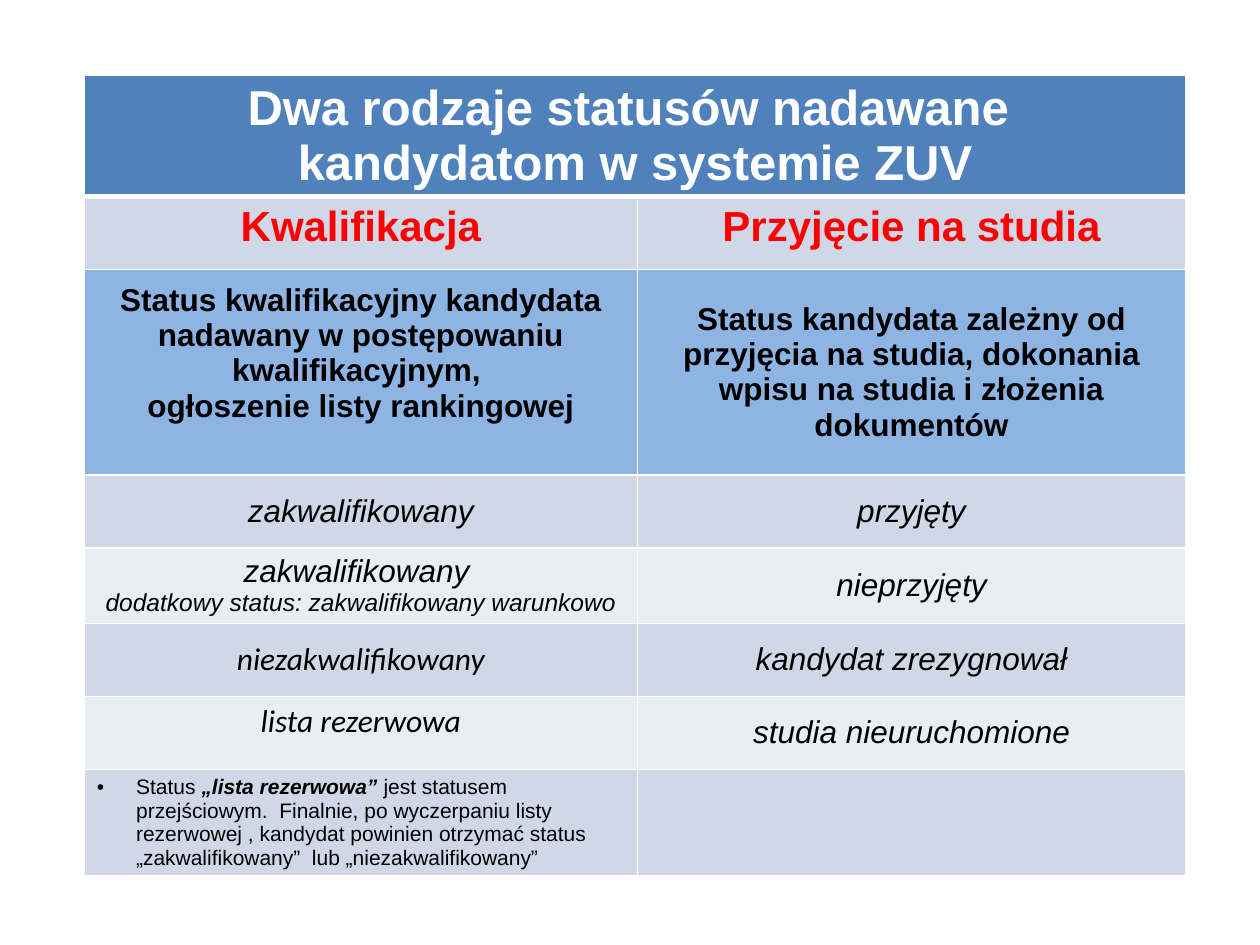
from lxml.etree import SubElement
from pptx import Presentation
from pptx.dml.color import RGBColor
from pptx.enum.text import MSO_ANCHOR as Anchor, PP_ALIGN as Align
from pptx.oxml import parse_xml
from pptx.oxml.ns import qn, nsdecls
from pptx.util import Cm, Pt

# Content: a cell is a list of paragraphs, a paragraph a list of (text, style)
TITLE = dict(size=28, color="FFFFFF", bold=True)
HEAD = dict(size=24, color="FF0000", bold=True)
LEAD = dict(size=18, bold=True)
STATUS = dict(size=18, italic=True)
STATUS_ALT = dict(STATUS, font="Calibri")
DETAIL = dict(size=14, italic=True)
NOTE = dict(size=12)
NOTE_KEY = dict(size=12, bold=True, italic=True)

ROWS = [
    ([[("Dwa rodzaje statusów nadawane ", TITLE)],
      [("kandydatom w systemie ZUV", TITLE)]], []),
    ([[("Kwalifikacja", HEAD)]], [[("Przyjęcie na studia", HEAD)]]),
    ([[("Status kwalifikacyjny kandydata nadawany w postępowaniu kwalifikacyjnym, ", LEAD)],
      [("ogłoszenie listy rankingowej", LEAD)]],
     [[("Status kandydata zależny od przyjęcia na studia, dokonania wpisu "
        "na studia i złożenia dokumentów", LEAD)]]),
    ([[("zakwalifikowany", STATUS)]], [[("przyjęty", STATUS)]]),
    ([[("zakwalifikowany ", STATUS)],
      [("dodatkowy status: zakwalifikowany warunkowo", DETAIL)]],
     [[("nieprzyjęty", STATUS)]]),
    ([[("niezakwalifikowany", STATUS_ALT)]], [[("kandydat zrezygnował", STATUS)]]),
    ([[("lista rezerwowa", STATUS_ALT)]], [[("studia nieuruchomione", STATUS)]]),
    ([[("Status ", NOTE), ("„lista rezerwowa” ", NOTE_KEY),
       ("jest statusem przejściowym.  Finalnie, po wyczerpaniu listy rezerwowej , "
        "kandydat powinien otrzymać status „zakwalifikowany”  lub „niezakwalifikowany”",
        NOTE)]], []),
]
BAND, LIGHT = "D0D8E8", "E9EDF4"
FILLS = ["4F81BD", BAND, "8EB4E3", BAND, LIGHT, BAND, LIGHT, BAND]
HEIGHTS = [2.42, 1.47, 4.14, 1.47, 1.52, 1.47, 1.47, 2.13]
WIDTHS = [11.15, 11.05]
TOP_ANCHORED = {(0, 0), (1, 0), (1, 1), (6, 0), (7, 0)}
LEFT, TOP = 1.7, 1.51
LAST = len(ROWS) - 1


def rgb(value):
    return RGBColor.from_string(value)


def add_run(p, text, size, color="000000", bold=False, italic=False, font="Arial"):
    r = p.add_run()
    r.text = text
    f = r.font
    f.size, f.name, f.bold, f.italic = Pt(size), font, bold, italic
    f.color.rgb = rgb(color)


def set_borders(cell, bottom):
    tc_pr = cell._tc.get_or_add_tcPr()
    for i, (side, width) in enumerate([("L", 1), ("R", 1), ("T", 1), ("B", bottom)]):
        tc_pr.insert(i, parse_xml(
            f'<a:ln{side} {nsdecls("a")} w="{Pt(width)}"><a:solidFill>'
            f'<a:srgbClr val="FFFFFF"/></a:solidFill></a:ln{side}>'))


def add_bullet(p, indent):
    p_pr = p._p.get_or_add_pPr()
    p_pr.set("marL", str(indent))
    p_pr.set("indent", str(-indent))
    SubElement(p_pr, qn("a:buFont")).set("typeface", "Arial")
    SubElement(p_pr, qn("a:buChar")).set("char", "•")


def fill_cell(cell, paragraphs, row, col):
    cell.fill.solid()
    cell.fill.fore_color.rgb = rgb(FILLS[row])
    set_borders(cell, 3 if row == 0 else 1)
    top = (row, col) in TOP_ANCHORED
    cell.vertical_anchor = Anchor.TOP if top else Anchor.MIDDLE
    tf = cell.text_frame
    for i, runs in enumerate(paragraphs):
        p = tf.add_paragraph() if i else tf.paragraphs[0]
        p.alignment = Align.LEFT if row == LAST else Align.CENTER
        if row == LAST:
            add_bullet(p, Cm(0.79))
        for text, style in runs:
            add_run(p, text, **style)


prs = Presentation()
prs.slide_width, prs.slide_height = Cm(25.4), Cm(19.05)
s = prs.slides.add_slide(prs.slide_layouts[6])

# Status table
table = s.shapes.add_table(len(ROWS), len(WIDTHS), Cm(LEFT), Cm(TOP),
                           Cm(sum(WIDTHS)), Cm(sum(HEIGHTS))).table
for column, width in zip(table.columns, WIDTHS):
    column.width = Cm(width)
for i, (cells, height) in enumerate(zip(ROWS, HEIGHTS)):
    table.rows[i].height = Cm(height)
    for j, paragraphs in enumerate(cells):
        fill_cell(table.cell(i, j), paragraphs, i, j)

# Title spans both columns; the left lead text sits above the middle
table.cell(0, 0).merge(table.cell(0, 1))
table.cell(2, 0).margin_bottom = Cm(0.9)

prs.save("out.pptx")
